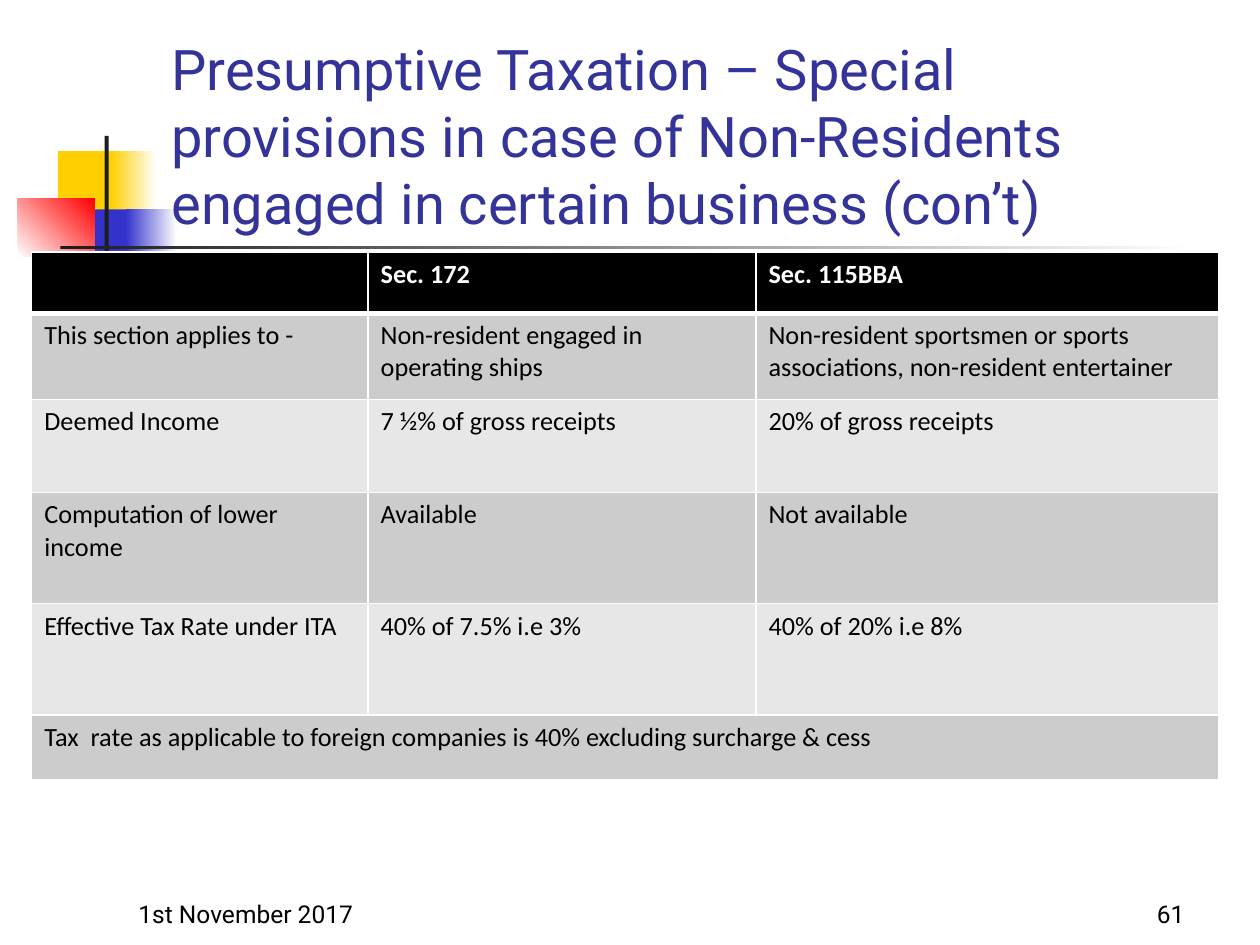
"""Build a slide comparing presumptive taxation under two sections."""
from dataclasses import dataclass

from lxml import etree
from pptx import Presentation
from pptx.dml.color import RGBColor
from pptx.enum.shapes import MSO_SHAPE
from pptx.enum.text import MSO_ANCHOR, MSO_AUTO_SIZE, PP_ALIGN
from pptx.oxml.ns import qn
from pptx.util import Cm, Pt

RECT = MSO_SHAPE.RECTANGLE
BOTTOM = MSO_ANCHOR.BOTTOM
FIXED = MSO_AUTO_SIZE.NONE
LEFT, RIGHT = PP_ALIGN.LEFT, PP_ALIGN.RIGHT


@dataclass
class Theme:
    head: str = "Roboto"
    body: str = "Calibri"
    title: str = "333399"
    black: str = "000000"
    white: str = "FFFFFF"
    gold: str = "FFCF01"
    blue: str = "3333CC"
    red: str = "FF0000"
    dark: str = "1C1C1C"
    odd: str = "CCCCCC"
    even: str = "E7E7E7"
    big: int = 32
    cell: int = 15
    foot: int = 14


theme = Theme()


def write(frame, text, font, size, color, align=LEFT, bold=False):
    frame.word_wrap = True
    para = frame.paragraphs[0]
    para.alignment = align
    run = para.add_run()
    run.text = text
    run.font.name = font
    run.font.size = Pt(size)
    run.font.bold = bold
    run.font.color.rgb = RGBColor.from_string(color)


def edge(cell, side, width):
    line = etree.SubElement(cell._tc.get_or_add_tcPr(), qn("a:" + side), w=str(Pt(width)))
    fill = etree.SubElement(line, qn("a:solidFill"))
    etree.SubElement(fill, qn("a:srgbClr"), val=theme.white)


deck = Presentation()
deck.slide_width, deck.slide_height = Cm(25.4), Cm(19.05)
slide = deck.slides.add_slide(deck.slide_layouts[5])
shapes = slide.shapes

blocks = [
    (1.17, 3.05, 1.22, 1.32, [theme.gold], 0),
    (2.24, 3.05, 0.91, 1.32, [theme.gold, theme.white], 0),
    (1.5, 4.22, 1.17, 1.32, [theme.blue], 0),
    (2.54, 4.22, 1.02, 1.32, [theme.blue, theme.white], 0),
    (0.36, 4.01, 1.55, 1.17, [theme.white, theme.red], 45),
    (2.11, 2.74, 0.08, 2.92, [theme.dark], 0),
    (1.22, 4.95, 22.86, 0.08, [theme.dark, theme.white], 0),
]
for x, y, wide, high, colors, angle in blocks:
    block = shapes.add_shape(RECT, Cm(x), Cm(y), Cm(wide), Cm(high))
    block.shadow.inherit = False
    block.line.fill.background()
    if len(colors) == 1:
        block.fill.solid()
        block.fill.fore_color.rgb = RGBColor.from_string(colors[0])
    else:
        block.fill.gradient()
        block.fill.gradient_angle = angle
        for stop, color in zip(block.fill.gradient_stops, colors):
            stop.color.rgb = RGBColor.from_string(color)

for x, text, align in [(2.54, "1st November 2017", LEFT), (18.85, "61", RIGHT)]:
    box = shapes.add_textbox(Cm(x), Cm(17.58), Cm(5.28), Cm(1.27))
    box.text_frame.vertical_anchor = BOTTOM
    write(box.text_frame, text, theme.head, theme.foot, theme.black, align)

title = shapes.title
title.element.getparent().append(title.element)
title.left, title.top, title.width, title.height = Cm(3.2), Cm(0.84), Cm(21.64), Cm(4.04)
title.text_frame.auto_size = FIXED
title.text_frame.vertical_anchor = BOTTOM
write(
    title.text_frame,
    "Presumptive Taxation – Special provisions in case of Non-Residents "
    "engaged in certain business (con’t)",
    theme.head, theme.big, theme.title,
)

rows = [
    ("", "Sec. 172", "Sec. 115BBA"),
    ("This section applies to -", "Non-resident engaged in operating ships",
     "Non-resident sportsmen or sports associations, non-resident entertainer"),
    ("Deemed Income", "7 ½% of gross receipts", "20% of gross receipts"),
    ("Computation of lower income", "Available", "Not available"),
    ("Effective Tax Rate under ITA", "40% of 7.5% i.e 3%", "40% of 20% i.e 8%"),
    ("Tax  rate as applicable to foreign companies is 40% excluding surcharge & cess", "", ""),
]
widths = [6.78, 7.82, 9.32]
heights = [1.24, 1.73, 1.88, 2.24, 2.24, 1.3]
table = shapes.add_table(
    len(rows), len(widths), Cm(0.64), Cm(5.08), Cm(sum(widths)), Cm(sum(heights))
).table
for col, wide in zip(table.columns, widths):
    col.width = Cm(wide)
for row, high in zip(table.rows, heights):
    row.height = Cm(high)
last = len(rows) - 1
table.cell(last, 0).merge(table.cell(last, 2))

for r, texts in enumerate(rows):
    top = r == 0
    ink = theme.white if top else theme.black
    back = theme.black if top else theme.odd if r % 2 else theme.even
    for c, text in enumerate(texts):
        cell = table.cell(r, c)
        for side in ("lnL", "lnR", "lnT", "lnB"):
            thick = (r, side) in [(0, "lnB"), (1, "lnT")]
            edge(cell, side, 3 if thick else 1)
        cell.fill.solid()
        cell.fill.fore_color.rgb = RGBColor.from_string(back)
        if text:
            write(cell.text_frame, text, theme.body, theme.cell, ink, bold=top)

deck.save("out.pptx")
